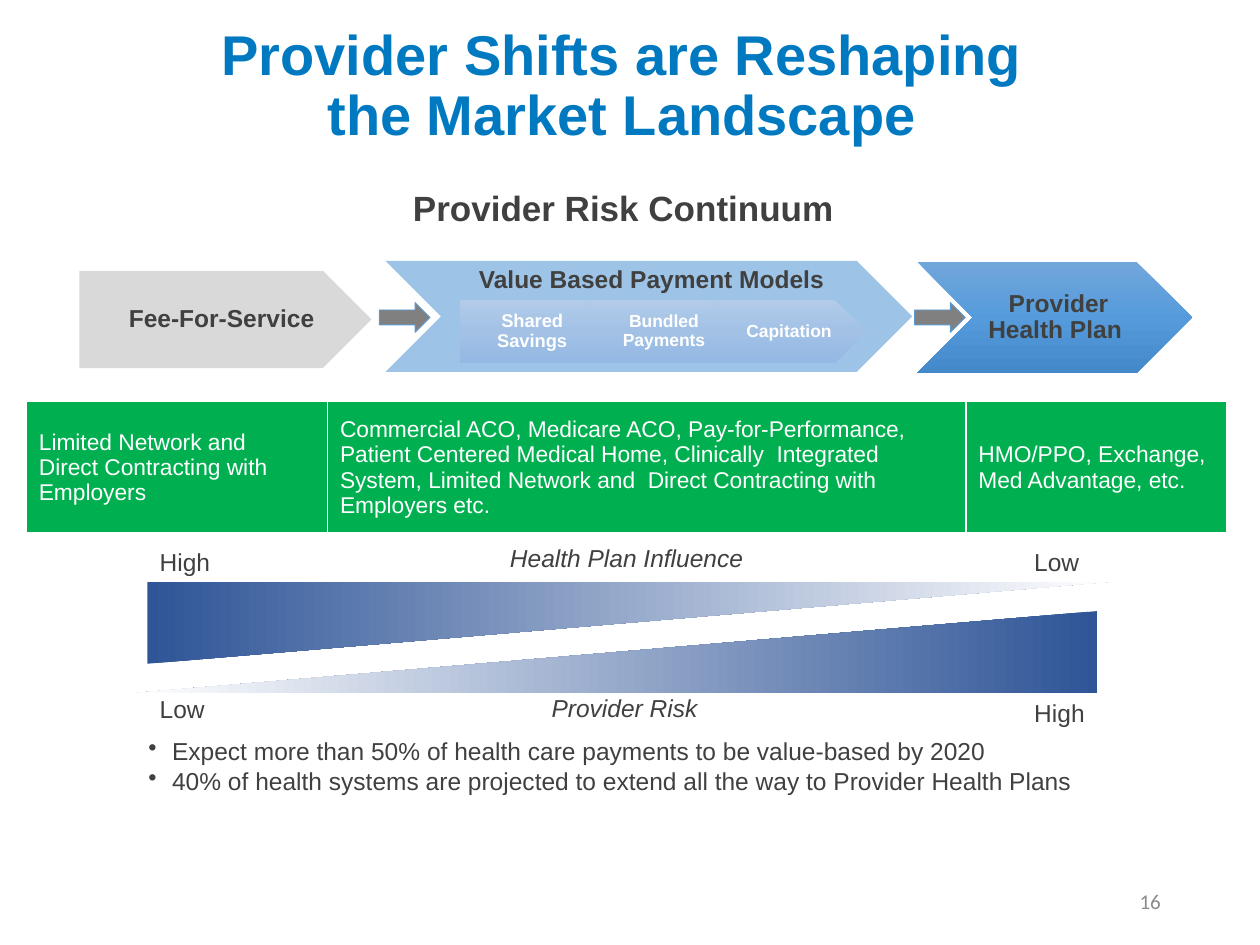
from dataclasses import dataclass
from pptx import Presentation
from pptx.dml.color import RGBColor
from pptx.enum.shapes import MSO_SHAPE
from pptx.enum.text import MSO_ANCHOR, PP_ALIGN
from pptx.oxml import parse_xml
from pptx.oxml.ns import nsdecls
from pptx.util import Cm, Pt

CHEVRON, PLATE = MSO_SHAPE.CHEVRON, MSO_SHAPE.PENTAGON
ARROW, WEDGE = MSO_SHAPE.RIGHT_ARROW, MSO_SHAPE.RIGHT_TRIANGLE
TOP, MIDDLE = MSO_ANCHOR.TOP, MSO_ANCHOR.MIDDLE
LEFT, CENTER, RIGHT = PP_ALIGN.LEFT, PP_ALIGN.CENTER, PP_ALIGN.RIGHT

HEX = {
    "title": "0079C1", "text": "404040", "white": "FFFFFF", "page": "8C8C8C",
    "pale": "9DC3E6", "light": "D9D9D9", "gray": "808080", "edge": "5B9BD5",
    "green": "00B050", "navy": "2F5597",
    "plan1": "71A6DB", "plan2": "559BDB", "plan3": "448ACA",
    "step1": "B1CBE9", "step2": "A3C1E5", "step3": "93B9E4",
}
PLAN = ("plan1", "plan2", "plan3")
STEP = ("step1", "step2", "step3")
FADE = ("navy", "white")


@dataclass
class Box:
    x: float
    y: float
    w: float
    h: float

    def place(self) -> tuple:
        return Cm(self.x), Cm(self.y), Cm(self.w), Cm(self.h)


@dataclass
class Style:
    size: float = 14
    color: str = "text"
    bold: bool = False
    slant: bool = False
    face: str = "Arial"
    align: PP_ALIGN = LEFT
    anchor: MSO_ANCHOR = TOP
    space: float = 1
    pad: tuple = (0.25, 0.13, 0.25, 0.13)
    wrap: bool = True


def rgb(name: str) -> RGBColor:
    return RGBColor.from_string(HEX[name])


def add_run(para, words: str, style: Style) -> None:
    run = para.add_run()
    run.text = words
    font = run.font
    font.name, font.size = style.face, Pt(style.size)
    font.bold, font.italic = style.bold, style.slant
    font.color.rgb = rgb(style.color)


def add_text(slide, box: Box, lines: list[str], style: Style, dots: bool = False) -> None:
    frame = slide.shapes.add_textbox(*box.place()).text_frame
    frame.word_wrap = style.wrap
    frame.vertical_anchor = style.anchor
    (frame.margin_left, frame.margin_top,
     frame.margin_right, frame.margin_bottom) = map(Cm, style.pad)
    for i, line in enumerate(lines):
        para = frame.add_paragraph() if i else frame.paragraphs[0]
        para.alignment, para.line_spacing = style.align, style.space
        if dots:
            props = para._p.get_or_add_pPr()
            props.set("marL", str(Cm(0.48)))
            props.set("indent", str(Cm(-0.48)))
            props.append(parse_xml(f'<a:buChar {nsdecls("a")} char="•"/>'))
        for j, part in enumerate(line.split("\n")):
            if j:
                para.add_line_break()
            add_run(para, part, style)


def add_form(slide, kind: MSO_SHAPE, box: Box, color: str = "", edge: str = ""):
    form = slide.shapes.add_shape(kind, *box.place())
    form.shadow.inherit = False
    if color:
        form.fill.solid()
        form.fill.fore_color.rgb = rgb(color)
    if edge:
        form.line.color.rgb = rgb(edge)
        form.line.width = Pt(0.5)
    else:
        form.line.fill.background()
    return form


def add_blend(form, names: tuple, angle: int) -> None:
    last = len(names) - 1
    stops = "".join(
        f'<a:gs pos="{100000 * i // last}"><a:srgbClr val="{HEX[name]}"/></a:gs>'
        for i, name in enumerate(names))
    blend = parse_xml(
        f'<a:gradFill {nsdecls("a")} rotWithShape="1"><a:gsLst>{stops}</a:gsLst>'
        f'<a:lin ang="{angle * 60000}" scaled="0"/></a:gradFill>')
    form._element.spPr.find("{*}prstGeom").addnext(blend)


def add_wedge(slide, box: Box, turn: int) -> None:
    wedge = add_form(slide, WEDGE, box)
    add_blend(wedge, FADE, 0)
    wedge.rotation = turn
    wedge._element.spPr.xfrm.set("flipH", "1")


def add_cell(slide, box: Box, words: str) -> None:
    table = slide.shapes.add_table(1, 1, *box.place()).table
    table.first_row = table.horz_banding = False
    cell = table.cell(0, 0)
    cell.fill.solid()
    cell.fill.fore_color.rgb = rgb("green")
    cell.vertical_anchor = MIDDLE
    add_run(cell.text_frame.paragraphs[0], words, Style(13, "white"))
    props = cell._tc.get_or_add_tcPr()
    for i, (side, width) in enumerate((("L", 1), ("R", 1), ("T", 1), ("B", 3))):
        props.insert(i, parse_xml(
            f'<a:ln{side} {nsdecls("a")} w="{Pt(width)}"><a:solidFill>'
            f'<a:srgbClr val="{HEX["white"]}"/></a:solidFill></a:ln{side}>'))


def draw_flow(slide) -> None:
    label = dict(bold=True, align=CENTER, space=0.9)
    wide = (0.18, 0.13, 0.05, 0.13)
    add_form(slide, CHEVRON, Box(7.77, 5.26, 10.62, 2.24), "pale")
    add_text(slide, Box(9.12, 5.26, 7.9, 2.24), ["Value Based Payment Models"],
             Style(pad=wide, **label))
    add_form(slide, PLATE, Box(1.6, 5.46, 5.89, 1.96), "light")
    add_text(slide, Box(1.6, 5.46, 5.56, 1.96), ["Fee-For-Service"],
             Style(anchor=MIDDLE, pad=(0.23, 0.13, 0.05, 0.13), **label))
    plan = add_form(slide, CHEVRON, Box(18.49, 5.28, 5.54, 2.24))
    add_blend(plan, PLAN, 90)
    add_text(slide, Box(19.51, 5.28, 3.53, 2.24), ["Provider Health Plan "],
             Style(anchor=MIDDLE, pad=wide, **label))

    for i, words in enumerate(("Shared Savings", "Bundled Payments", "Capitation")):
        x = 9.27 + 2.52 * i
        step = add_form(slide, CHEVRON if i else PLATE, Box(x, 6.05, 3.15, 1.27))
        add_blend(step, STEP, 90)
        shift, width, size = (0.62, 1.88, 10) if i else (0, 2.82, 10.5)
        pad = (0.1, 0.08, 0.03, 0.08) if i else (0.15, 0.08, 0.05, 0.08)
        add_text(slide, Box(x + shift, 6.05, width, 1.27), [words],
                 Style(size, "white", anchor=MIDDLE, pad=pad, **label))

    for x in (7.65, 18.44):
        add_form(slide, ARROW, Box(x, 6.1, 1.02, 0.6), "gray", "edge")


def draw_cells(slide) -> None:
    x = 0.53
    for width, words in (
        (6.07, "Limited Network and  Direct Contracting with Employers"),
        (12.87, "Commercial ACO, Medicare ACO, Pay-for-Performance, Patient Centered "
                "Medical Home, Clinically  Integrated System, Limited Network and  "
                "Direct Contracting with Employers etc."),
        (5.26, "HMO/PPO, Exchange, Med Advantage, etc."),
    ):
        add_cell(slide, Box(x, 8.08, width, 2.69), words)
        x += width


def draw_scales(slide) -> None:
    add_wedge(slide, Box(2.74, 12.32, 19.38, 1.65), 0)
    add_wedge(slide, Box(2.97, 11.73, 19.38, 1.65), 180)
    for x, y, width, words, slant in (
        (10.87, 13.84, 3.61, "Provider Risk", True),
        (10.03, 10.82, 5.38, "Health Plan Influence", True),
        (2.97, 10.9, 1.55, "High", False),
        (20.6, 10.9, 1.42, "Low", False),
        (20.6, 13.94, 1.55, "High", False),
        (2.97, 13.87, 1.42, "Low", False),
    ):
        add_text(slide, Box(x, y, width, 0.86), [words], Style(slant=slant, wrap=False))


def main() -> None:
    deck = Presentation()
    deck.slide_width, deck.slide_height = Cm(25.4), Cm(19.05)
    slide = deck.slides.add_slide(deck.slide_layouts[6])
    add_text(slide, Box(2.08, 0.33, 21.23, 2.87),
             ["Provider Shifts are Reshaping \nthe Market Landscape "],
             Style(32, "title", True, align=CENTER, anchor=MIDDLE, space=0.9))
    add_text(slide, Box(6.58, 3.63, 12.17, 1.12), ["Provider Risk Continuum "],
             Style(20, bold=True, align=CENTER))
    draw_flow(slide)
    draw_cells(slide)
    draw_scales(slide)
    add_text(slide, Box(2.74, 14.71, 19.41, 1.45), [
        "Expect more than 50% of health care payments to be value-based by 2020",
        "40% of health systems are projected to extend all the way to Provider Health Plans",
    ], Style(), dots=True)
    add_text(slide, Box(17.93, 17.65, 5.72, 1.02), ["16"],
             Style(12, "page", face="Calibri", align=RIGHT, anchor=MIDDLE))
    deck.save("out.pptx")


if __name__ == "__main__":
    main()
